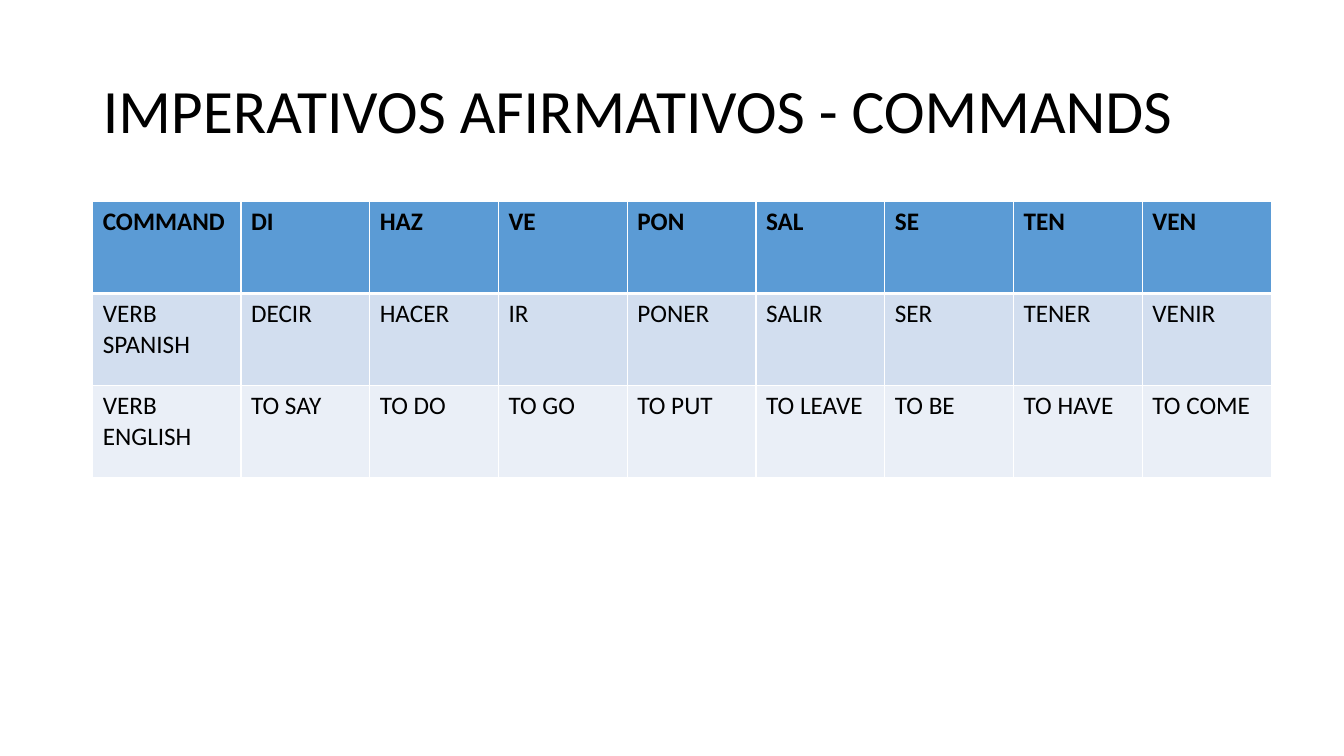
"""Builds a slide with a table of Spanish affirmative commands."""
import lxml.etree
import pptx
import pptx.dml.color
import pptx.enum.text
import pptx.oxml.ns
import pptx.util

Inches = pptx.util.Inches
COLORS = {"text": "000000", "border": "FFFFFF", "header": "5B9BD5",
          "spanish": "D2DEEF", "english": "EAEFF7"}
TABLE_WIDTH, LABEL_WIDTH, TABLE_HEIGHT = 11.69, 1.47, 2.74
ROWS = [
    ("header", ["COMMAND", "DI", "HAZ", "VE", "PON", "SAL", "SE", "TEN", "VEN"]),
    ("spanish", ["VERB\nSPANISH", "DECIR", "HACER", "IR", "PONER", "SALIR",
                 "SER", "TENER", "VENIR"]),
    ("english", ["VERB\nENGLISH", "TO SAY", "TO DO", "TO GO", "TO PUT",
                 "TO LEAVE", "TO BE", "TO HAVE", "TO COME"]),
]


def style_font(font, size, bold):
    formats = {"name": "Calibri", "size": pptx.util.Pt(size), "bold": bold}
    for attribute, value in formats.items():
        setattr(font, attribute, value)
    font.color.rgb = pptx.dml.color.RGBColor.from_string(COLORS["text"])


def add_border(cell, side, points):
    properties = cell._tc.get_or_add_tcPr()
    line = lxml.etree.SubElement(properties, pptx.oxml.ns.qn(f"a:{side}"),
                                 w=str(pptx.util.Pt(points)))
    fill = lxml.etree.SubElement(line, pptx.oxml.ns.qn("a:solidFill"))
    lxml.etree.SubElement(fill, pptx.oxml.ns.qn("a:srgbClr"), val=COLORS["border"])


deck = pptx.Presentation()
deck.slide_width, deck.slide_height = Inches(13.33), Inches(7.5)
slide = deck.slides.add_slide(deck.slide_layouts[5])

heading = slide.shapes.title
placement = {"left": 0.92, "top": 0.4, "width": 11.5, "height": 1.45}
for attribute, value in placement.items():
    setattr(heading, attribute, Inches(value))
heading_text = heading.text_frame
heading_text.text = "IMPERATIVOS AFIRMATIVOS - COMMANDS"
frame_formats = {"word_wrap": True,
                 "auto_size": pptx.enum.text.MSO_AUTO_SIZE.NONE,
                 "vertical_anchor": pptx.enum.text.MSO_ANCHOR.MIDDLE}
for attribute, value in frame_formats.items():
    setattr(heading_text, attribute, value)
heading_line = heading_text.paragraphs[0]
heading_line.alignment = pptx.enum.text.PP_ALIGN.LEFT
heading_line.line_spacing = 0.9
style_font(heading_line.runs[0].font, 44, False)

verb_count = len(ROWS[0][1]) - 1
commands = slide.shapes.add_table(
    len(ROWS), verb_count + 1, Inches(0.92), Inches(2),
    Inches(TABLE_WIDTH), Inches(TABLE_HEIGHT)).table
for index, column in enumerate(commands.columns):
    verb_width = (TABLE_WIDTH - LABEL_WIDTH) / verb_count
    column.width = Inches(verb_width if index else LABEL_WIDTH)

for row_index, (kind, words) in enumerate(ROWS):
    for column_index, word in enumerate(words):
        cell = commands.cell(row_index, column_index)
        cell.text = word
        for paragraph in cell.text_frame.paragraphs:
            style_font(paragraph.runs[0].font, 18, kind == "header")
        borders = {"lnL": 1, "lnR": 1,
                   "lnT": 3 if kind == "spanish" else 1,
                   "lnB": 3 if kind == "header" else 1}
        for side, points in borders.items():
            add_border(cell, side, points)
        cell.fill.solid()
        cell.fill.fore_color.rgb = pptx.dml.color.RGBColor.from_string(COLORS[kind])

deck.save("out.pptx")
